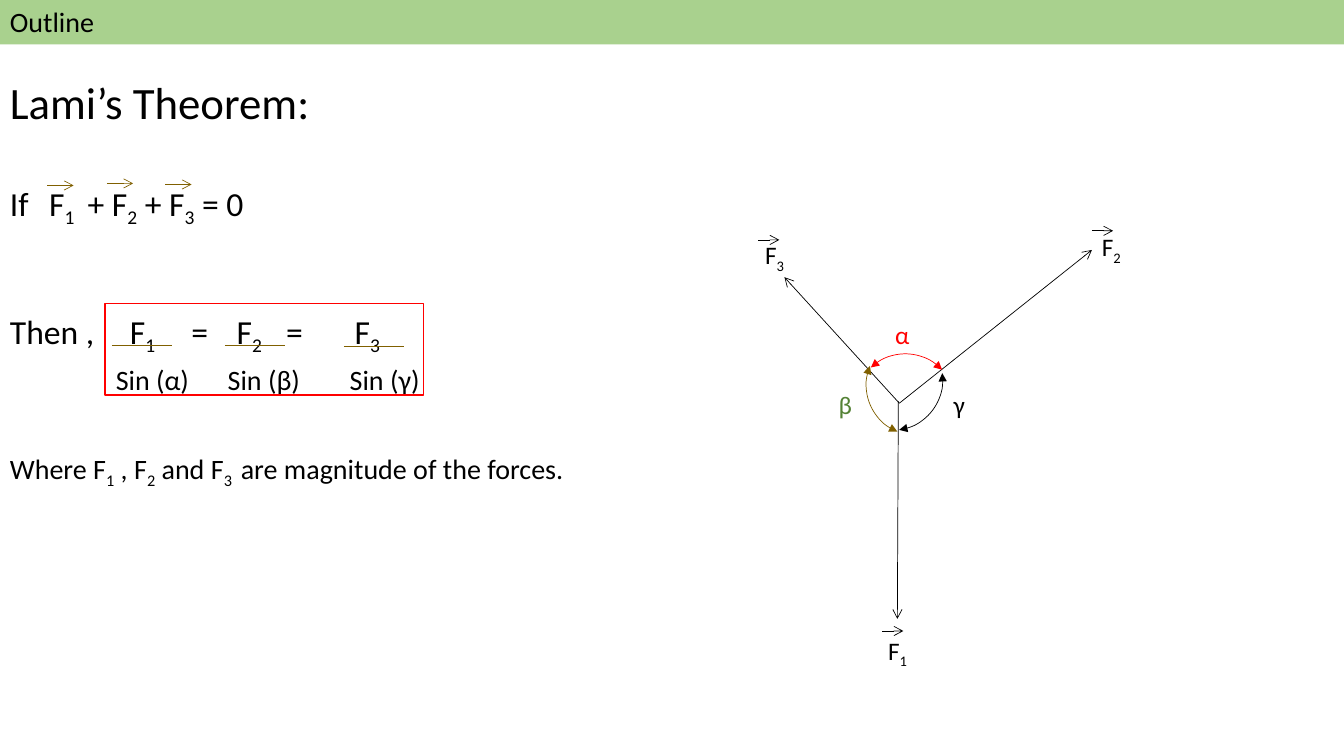
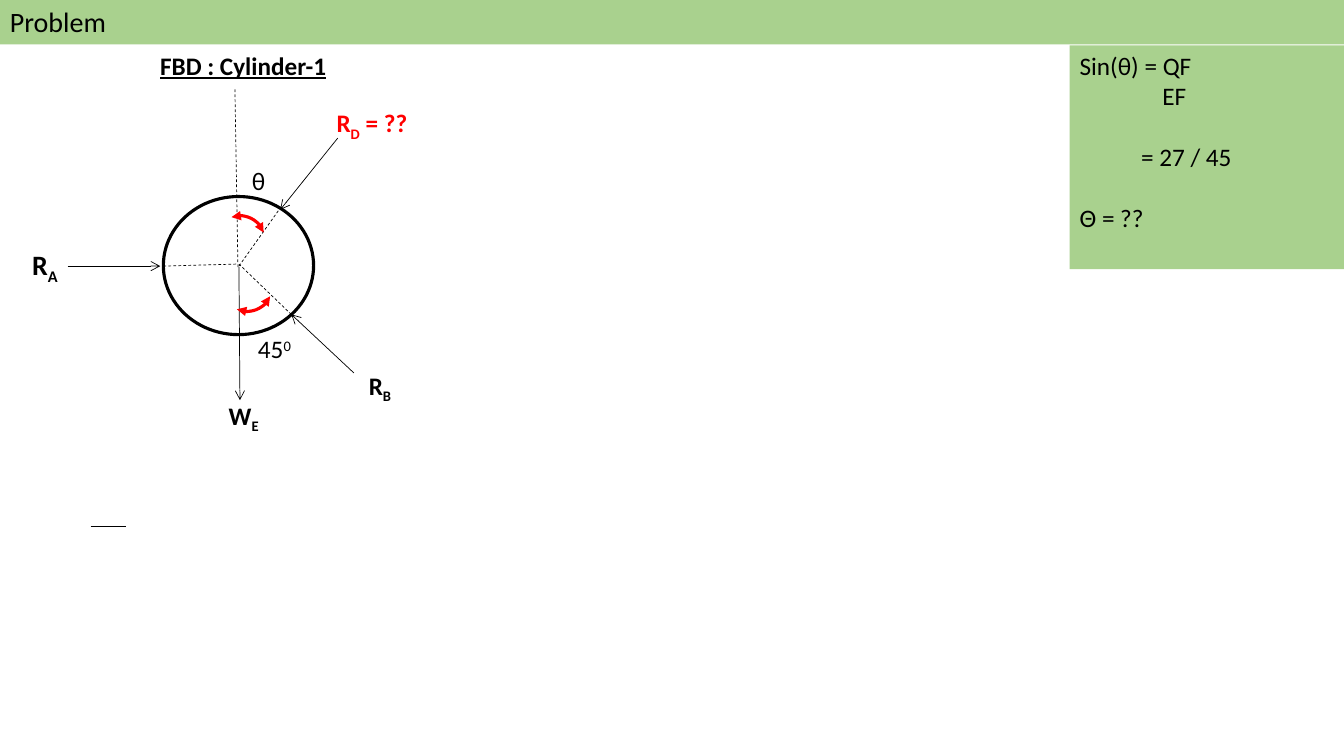
from lxml.etree import SubElement
from pptx import Presentation
from pptx.dml.color import RGBColor
from pptx.enum.dml import MSO_LINE
from pptx.enum.shapes import MSO_CONNECTOR, MSO_SHAPE
from pptx.enum.text import MSO_ANCHOR, PP_ALIGN
from pptx.oxml.ns import qn
from pptx.util import Inches, Pt

BLACK = RGBColor(0x00, 0x00, 0x00)
RED = RGBColor(0xFF, 0x00, 0x00)
GOLD = RGBColor(0x80, 0x60, 0x00)
DARK_GREEN = RGBColor(0x54, 0x82, 0x35)
BAND_GREEN = RGBColor(0xA9, 0xD1, 0x8E)
FONT = "Calibri"
WIDTH, HEIGHT = 13.33, 7.5
BAND_HEIGHT = 0.44
LABEL_HEIGHT = 0.4
THIN, THICK = 0.5, 2.25

# Text between bars is lowered (or raised, for a label with a raise).
# Paragraph: text, size, space before in points, tab stops in inches.
THEOREM = [
    ("Lami’s Theorem:", 32, 0, ()),
    ("If\tF|1|\t+ F|2| + F|3| = 0", 24, 39, (0.39, 0.77)),
    ("Then ,\tF|1|\t=\tF|2|\t=\tF|3|", 24, 58.5, (1.19, 1.8, 2.25, 2.74, 3.42)),
    ("\tSin (α)\tSin (β)\tSin (γ)", 20, 4, (1.05, 2.16, 3.37)),
    ("Where F|1| , F|2| and F|3|\tare magnitude of the forces.", 20, 40, (2.29,)),
]
ANGLE_SOLUTION = [
    ("Sin(θ) = QF", 18, 0, ()),
    ("\tEF", 18, 0, (0.82,)),
    ("\t= 27 / 45", 18, 22, (0.61,)),
    ("Θ = ??", 18, 22, ()),
]

# Forces from the common point: start, tip, label, label corner, vector sign
FORCES = [
    ((8.92, 4), (10.83, 2.48), "F|2|", (10.83, 2.25), (10.83, 2.29)),
    ((8.92, 4), (7.78, 2.75), "F|3|", (7.49, 2.33), (7.52, 2.38)),
    ((8.91, 3.98), (8.9, 6.14), "F|1|", (8.71, 6.25), (8.75, 6.26)),
]
# Angles: arc corner, rotation, arc colour, name, name corner, name colour
ANGLES = [
    ((8.48, 3.51), 316.8, RED, "α", (8.78, 3.12), RED),
    ((8.59, 3.32), 202.3, GOLD, "β", (8.22, 3.81), DARK_GREEN),
    ((8.35, 3.27), 82.2, BLACK, "γ", (9.36, 3.81), BLACK),
]
SUM_VECTOR_SIGNS = [(0.47, 1.84), (1.06, 1.82), (1.64, 1.83)]
FRACTION_BARS = [(1.11, 3.43), (2.23, 3.43), (3.41, 3.44)]

# Cylinder lines: start, end
REACTION_ARROWS = [
    ((0.67, 2.64), (1.59, 2.64)),
    ((3.51, 3.7), (2.89, 3.12)),
    ((3.35, 1.37), (2.78, 2.08)),
    ((2.37, 2.65), (2.38, 3.97)),
]
RADIUS_LINES = [
    ((1.62, 2.64), (2.35, 2.62)),
    ((2.89, 3.12), (2.37, 2.62)),
    ((2.37, 2.64), (2.79, 2.05)),
    ((2.36, 2.65), (2.33, 0.88)),
]
# Cylinder labels: text, corner, width, style
CYLINDER_LABELS = [
    ("FBD : Cylinder-1", (1.49, 0.45), 1.94, {"bold": True, "underline": True}),
    ("R|A|", (0.22, 2.41), 0.7, {"bold": True, "size": 20}),
    ("R|D| = ??", (3.24, 1.02), 1.53, {"bold": True, "color": RED}),
    ("R|B|", (3.56, 3.62), 0.57, {"bold": True}),
    ("W|E|", (2.17, 3.92), 0.57, {"bold": True}),
    ("45|0|", (2.46, 3.26), 0.69, {"shift": 30}),
    ("θ", (2.4, 1.59), 0.69, {}),
]
CYLINDER_ARCS = [((2.2, 2.59), 113.6), ((2.13, 2.14), 340.6)]


def add_runs(paragraph, text, size, color=BLACK, bold=None, underline=None, shift=-25):
    """Every second part of the text, split at the bars, is shifted off the baseline."""
    for index, part in enumerate(text.split("|")):
        if not part:
            continue
        run = paragraph.add_run()
        run.text = part
        font = run.font
        font.name, font.size, font.bold, font.underline = FONT, Pt(size), bold, underline
        font.color.rgb = color
        if index % 2:
            run._r.get_or_add_rPr().set("baseline", str(shift * 1000))


def write(shape, paragraphs, **style):
    frame = shape.text_frame
    frame.word_wrap = True
    frame.vertical_anchor = MSO_ANCHOR.TOP
    for index, (text, size, space_before, tabs) in enumerate(paragraphs):
        paragraph = frame.add_paragraph() if index else frame.paragraphs[0]
        paragraph.alignment = PP_ALIGN.LEFT
        if space_before:
            paragraph.space_before = Pt(space_before)
        if tabs:
            tab_list = SubElement(paragraph._p.get_or_add_pPr(), qn("a:tabLst"))
            for position in tabs:
                SubElement(tab_list, qn("a:tab"), pos=str(Inches(position)), algn="l")
        add_runs(paragraph, text, size, **style)


def add_text(slide, paragraphs, corner, width, height, **style):
    box = slide.shapes.add_textbox(*map(Inches, (*corner, width, height)))
    write(box, paragraphs, **style)


def add_label(slide, text, corner, width, size=18, **style):
    add_text(slide, [(text, size, 0, ())], corner, width, LABEL_HEIGHT, **style)


def add_figure(slide, kind, corner, width, height, fill=None, line=None, weight=THIN):
    shape = slide.shapes.add_shape(kind, *map(Inches, (*corner, width, height)))
    shape.shadow.inherit = False
    if fill is None:
        shape.fill.background()
    else:
        shape.fill.solid()
        shape.fill.fore_color.rgb = fill
    if line is None:
        shape.line.fill.background()
    else:
        shape.line.color.rgb = line
        shape.line.width = Pt(weight)
    return shape


def add_arrowheads(shape, *ends, kind):
    for end in ends:
        SubElement(shape.line._get_or_add_ln(), qn(f"a:{end}"), type=kind)


def add_line(slide, start, end, color=BLACK, arrow=False, dashed=False):
    line = slide.shapes.add_connector(MSO_CONNECTOR.STRAIGHT, *map(Inches, (*start, *end)))
    line.line.color.rgb = color
    line.line.width = Pt(THIN)
    if dashed:
        line.line.dash_style = MSO_LINE.DASH
    if arrow:
        add_arrowheads(line, "tailEnd", kind="arrow")
    SubElement(line._element.spPr, qn("a:effectLst"))


def add_level_line(slide, start, length, color=BLACK, arrow=False):
    add_line(slide, start, (start[0] + length, start[1]), color, arrow)


def add_angle_arc(slide, corner, diameter, rotation, color, weight):
    arc = add_figure(slide, MSO_SHAPE.ARC, corner, diameter, diameter, line=color, weight=weight)
    arc.rotation = rotation
    add_arrowheads(arc, "headEnd", "tailEnd", kind="triangle")


def add_titled_slide(presentation, title):
    slide = presentation.slides.add_slide(presentation.slide_layouts[6])
    band = add_figure(slide, MSO_SHAPE.RECTANGLE, (0, 0), WIDTH, BAND_HEIGHT, fill=BAND_GREEN)
    write(band, [(title, 20, 0, ())])
    return slide


def build_theorem(presentation):
    slide = add_titled_slide(presentation, "Outline")
    add_text(slide, THEOREM, (0, 0.69), 7.94, 4.61)
    for start, tip, name, name_corner, sign_start in FORCES:
        add_line(slide, start, tip, arrow=True)
        add_label(slide, name, name_corner, 0.49)
        add_level_line(slide, sign_start, 0.21, arrow=True)
    for corner, rotation, color, name, name_corner, name_color in ANGLES:
        add_angle_arc(slide, corner, 1, rotation, color, THIN)
        add_label(slide, name, name_corner, 0.43, color=name_color)
    for start in SUM_VECTOR_SIGNS:
        add_level_line(slide, start, 0.26, GOLD, arrow=True)
    for start in FRACTION_BARS:
        add_level_line(slide, start, 0.6, GOLD)
    add_figure(slide, MSO_SHAPE.RECTANGLE, (1.04, 3.01), 3.16, 0.91, line=RED, weight=1)


def build_problem(presentation):
    slide = add_titled_slide(presentation, "Problem")
    add_figure(slide, MSO_SHAPE.OVAL, (1.62, 1.95), 1.49, 1.37, line=BLACK, weight=THICK)
    for start, end in REACTION_ARROWS:
        add_line(slide, start, end, arrow=True)
    for start, end in RADIUS_LINES:
        add_line(slide, start, end, dashed=True)
    for corner, rotation in CYLINDER_ARCS:
        add_angle_arc(slide, corner, 0.5, rotation, RED, THICK)
    for text, corner, width, style in CYLINDER_LABELS:
        add_label(slide, text, corner, width, **style)
    panel = add_figure(slide, MSO_SHAPE.RECTANGLE, (10.61, 0.45), 2.72, 2.22, fill=BAND_GREEN)
    write(panel, ANGLE_SOLUTION)
    add_level_line(slide, (0.9, 5.22), 0.35)


def main():
    presentation = Presentation()
    presentation.slide_width = Inches(WIDTH)
    presentation.slide_height = Inches(HEIGHT)
    build_theorem(presentation)
    build_problem(presentation)
    presentation.save("out.pptx")


if __name__ == "__main__":
    main()
